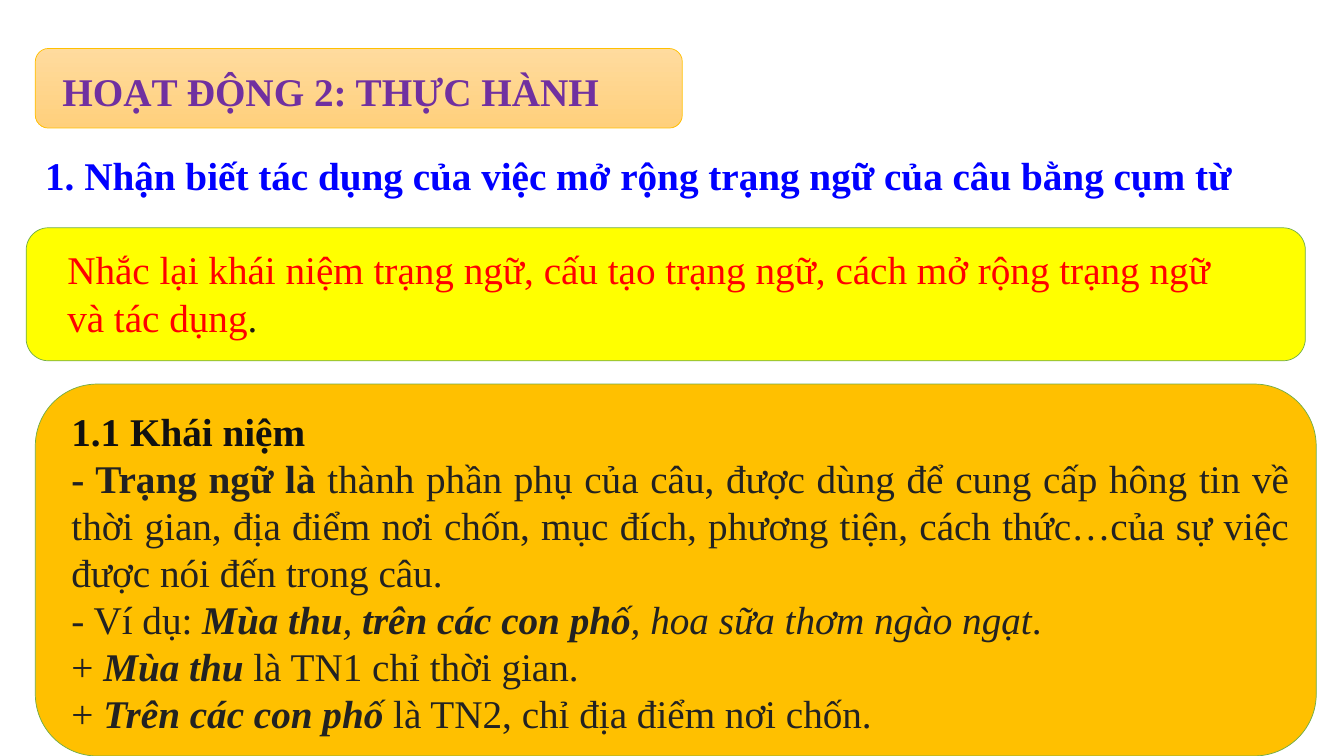
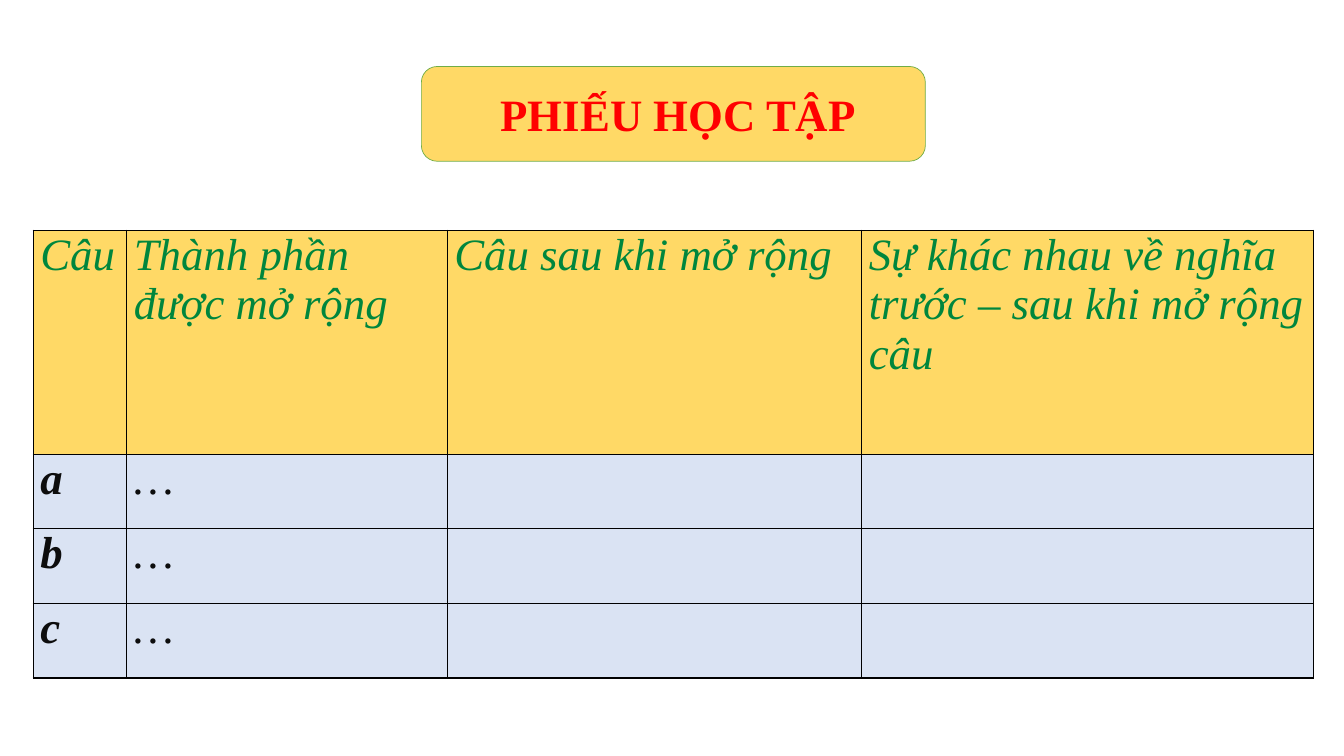
"""Build two Vietnamese grammar lesson slides: a practice page and a worksheet."""
from lxml import etree
from pptx import Presentation
from pptx.dml import color as dml
from pptx.enum import shapes, text
from pptx.oxml import ns
from pptx.util import Pt

FONT = "Times New Roman"
BODY_SIZE = 28
WORKSHEET_SIZE = 32
GREEN = "70AD47"
ORANGE = "FFC000"
GOLD = "FFD966"
YELLOW = "FFFF00"
RED = "FF0000"
PURPLE = "7030A0"
BLUE = "0000FF"
INK = "222222"
LEFT = text.PP_ALIGN.LEFT
CENTER = text.PP_ALIGN.CENTER
JUSTIFY = text.PP_ALIGN.JUSTIFY

CONCEPT = [
    [("1.1 Khái niệm", "b", "111111")],
    [("- Trạng ngữ là ", "b"),
     ("thành phần phụ của câu, được dùng để cung cấp hông tin về thời gian, "
      "địa điểm nơi chốn, mục đích, phương tiện, cách thức…của sự việc "
      "được nói đến trong câu.", "")],
    [("- Ví dụ: ", ""), ("Mùa thu", "bi"), (", ", "i"),
     ("trên các con phố", "bi"), (", hoa sữa thơm ngào ngạt", "i"), (".", "")],
    [("+ ", ""), ("Mùa thu ", "bi"), ("là TN1 chỉ thời gian.", "")],
    [("+ ", ""), ("Trên các con phố ", "bi"),
     ("là TN2, chỉ địa điểm nơi chốn.", "")],
]
WORKSHEET_HEADER = [
    "Câu", "Thành phần được mở rộng", "Câu sau khi mở rộng",
    "Sự khác nhau về nghĩa trước – sau khi mở rộng câu",
]
WORKSHEET_ROWS = [[letter, "…", "", ""] for letter in "abc"]


def rgb(value):
    """Turn a hex string into a colour."""
    return dml.RGBColor.from_string(value)


def points(*values):
    """Turn numbers into lengths in points."""
    return [Pt(value) for value in values]


def add_panel(slide, box, fill, line=GREEN):
    """Add a rounded panel; a pair of fills makes a vertical gradient."""
    panel = slide.shapes.add_shape(
        shapes.MSO_SHAPE.ROUNDED_RECTANGLE, *points(*box))
    panel.shadow.inherit = False
    panel.line.color.rgb = rgb(line)
    panel.line.width = Pt(0.5)
    if isinstance(fill, str):
        panel.fill.solid()
        panel.fill.fore_color.rgb = rgb(fill)
    else:
        panel.fill.gradient()
        panel.fill.gradient_angle = 270
        for stop, value in zip(panel.fill.gradient_stops, fill):
            stop.color.rgb = rgb(value)


def write_runs(paragraph, runs, size, color):
    """Write (text, style, optional colour) runs; style letters are b and i."""
    paragraph.font.name = FONT
    paragraph.font.size = Pt(size)
    paragraph.font.color.rgb = rgb(color)
    for content, style, *own_color in runs:
        run = paragraph.add_run()
        run.text = content
        run.font.bold = "b" in style
        run.font.italic = "i" in style
        if own_color:
            run.font.color.rgb = rgb(own_color[0])


def add_text(slide, box, paragraphs, color, size=BODY_SIZE, align=LEFT, wrap=True):
    """Add a text box and return its paragraphs."""
    frame = slide.shapes.add_textbox(*points(*box)).text_frame
    frame.word_wrap = wrap
    frame.auto_size = text.MSO_AUTO_SIZE.SHAPE_TO_FIT_TEXT
    for index, runs in enumerate(paragraphs):
        paragraph = frame.add_paragraph() if index else frame.paragraphs[0]
        paragraph.alignment = align
        write_runs(paragraph, runs, size, color)
    return frame.paragraphs


def set_borders(cell):
    """Draw a thin black line on each side of a cell."""
    properties = cell._tc.get_or_add_tcPr()
    for index, side in enumerate(("lnL", "lnR", "lnT", "lnB")):
        line = etree.Element(ns.qn(f"a:{side}"), w=str(Pt(1)))
        fill = etree.SubElement(line, ns.qn("a:solidFill"))
        etree.SubElement(fill, ns.qn("a:srgbClr"), val="000000")
        properties.insert(index, line)


def fill_cell(cell, content, style, color, fill):
    """Fill, border and write one table cell."""
    cell.fill.solid()
    cell.fill.fore_color.rgb = rgb(fill)
    set_borders(cell)
    cell.margin_left = cell.margin_right = Pt(5)
    cell.margin_top = cell.margin_bottom = 0
    if content:
        write_runs(cell.text_frame.paragraphs[0], [(content, style)],
                   WORKSHEET_SIZE, color)


def add_worksheet(slide, left, top, widths, heights):
    """Add the worksheet table with a gold header row."""
    rows = [WORKSHEET_HEADER, *WORKSHEET_ROWS]
    table = slide.shapes.add_table(
        len(rows), len(widths),
        *points(left, top, sum(widths), sum(heights))).table
    for column, width in zip(table.columns, widths):
        column.width = Pt(width)
    for row_index, (contents, height) in enumerate(zip(rows, heights)):
        table.rows[row_index].height = Pt(height)
        color, fill = ("0D0D0D", "DAE3F3") if row_index else ("00863D", GOLD)
        for column_index, content in enumerate(contents):
            style = "bi" if row_index and column_index == 0 else "i"
            fill_cell(table.cell(row_index, column_index),
                      content, style, color, fill)


def build_practice(slide):
    """Build the practice slide with its three panels."""
    add_panel(slide, (25.2, 274.3, 915, 265.7), ORANGE)
    add_panel(slide, (25.2, 34.6, 462.2, 56.9), ("FFDB9E", "FFD07C"), ORANGE)
    add_panel(slide, (18.7, 162.7, 913.7, 95), YELLOW)
    heading = add_text(slide, (35.3, 39.6, 401.8, 46),
                       [[("HOẠT ĐỘNG 2: THỰC HÀNH", "b")]],
                       PURPLE, align=CENTER, wrap=False)[0]
    heading.line_spacing = 1.15
    heading.space_before = Pt(6)
    add_text(slide, (25.2, 104.4, 902.9, 41),
             [[("1. Nhận biết tác dụng của việc mở rộng trạng ngữ "
                "của câu bằng cụm từ", "b")]], BLUE, align=JUSTIFY)
    add_text(slide, (41, 172, 861.8, 75),
             [[("Nhắc lại khái niệm trạng ngữ, cấu tạo trạng ngữ, "
                "cách mở rộng trạng ngữ và tác dụng", ""),
               (".", "", "1D1B11")]], RED)
    add_text(slide, (43.9, 287.3, 884.2, 244.8), CONCEPT, INK, align=JUSTIFY)


def build_worksheet(slide):
    """Build the worksheet slide with its title and table."""
    add_panel(slide, (301, 47.5, 360, 67.7), GOLD)
    add_text(slide, (345.3, 58.3, 278.6, 46), [[("PHIẾU HỌC TẬP", "b")]],
             RED, WORKSHEET_SIZE, CENTER, wrap=False)
    add_worksheet(slide, 23.8, 164.4, (66.8, 229, 296, 322.6),
                  (160, 53.3, 53.3, 53.3))


def main():
    """Build and save the presentation."""
    presentation = Presentation()
    presentation.slide_width, presentation.slide_height = points(960, 540)
    for build in (build_practice, build_worksheet):
        build(presentation.slides.add_slide(presentation.slide_layouts[6]))
    presentation.save("out.pptx")


if __name__ == "__main__":
    main()
